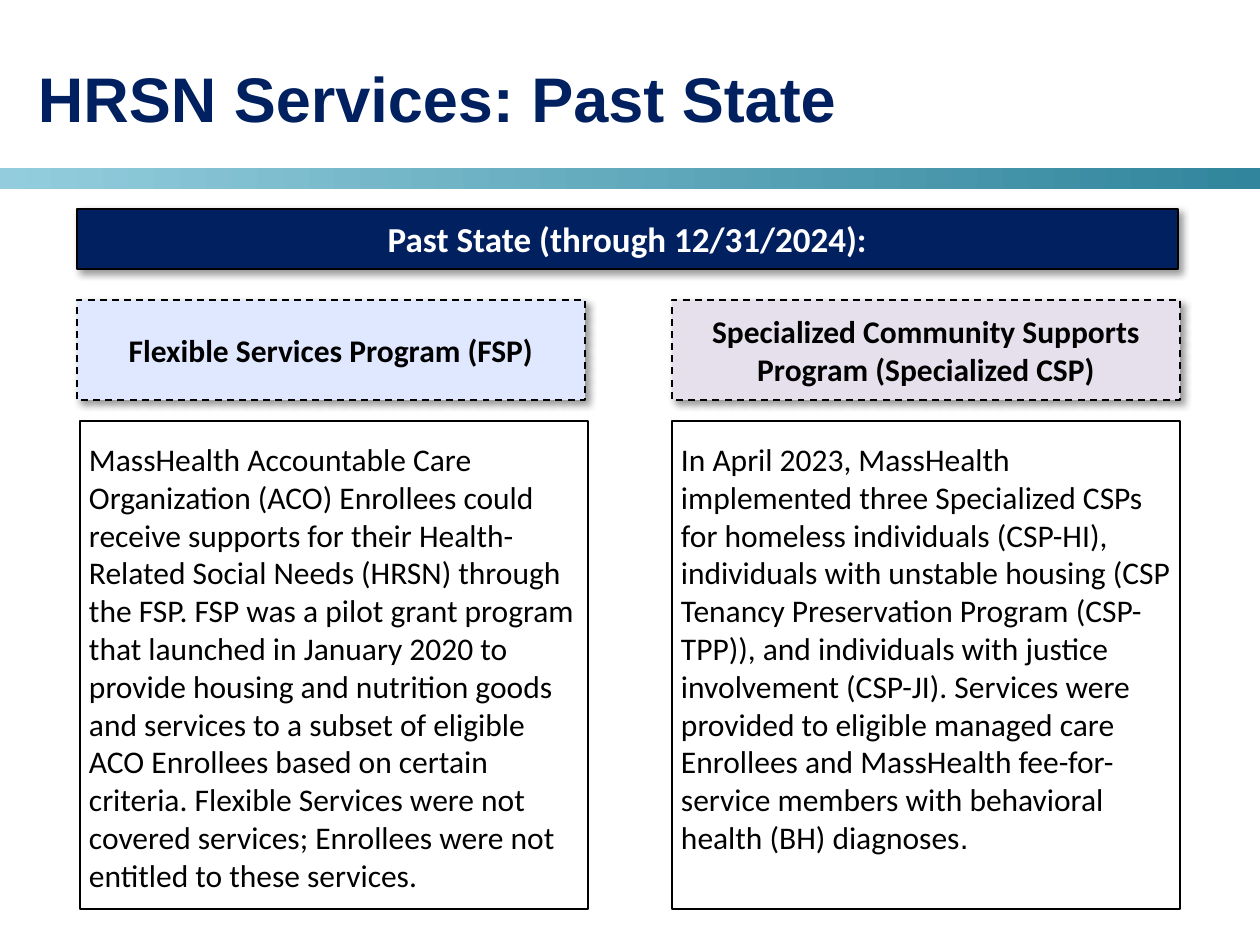
"""Build the slide on the past state of HRSN services."""
from dataclasses import dataclass

from lxml import etree
from pptx import Presentation, util as u
from pptx.dml.color import RGBColor
from pptx.enum import dml, shapes, text
from pptx.oxml.ns import qn


@dataclass(frozen=True)
class Theme:
    navy: str = "002060"
    blue: str = "DFE8FF"
    lilac: str = "E6E0EC"
    teal: str = "31859C"
    aqua: str = "93CDDD"
    black: str = "000000"
    white: str = "FFFFFF"
    title_size: int = 36
    banner_size: int = 20
    body_size: int = 18
    title_font: str = "Arial"
    body_font: str = "Calibri"


class Builder:
    SCALE = 914400 / 126

    def __init__(self, deck, theme):
        self.theme = theme
        deck.slide_width, deck.slide_height = self.px(1260), self.px(945)
        self.page = deck.slides.add_slide(deck.slide_layouts[6])

    def px(self, length):
        return u.Emu(round(length * self.SCALE))

    def rectangle(self, *bounds):
        box = self.page.shapes.add_shape(
            shapes.MSO_SHAPE.RECTANGLE, *map(self.px, bounds))
        box.shadow.inherit = False
        return box

    def outline(self, box, points, dashed=False):
        box.line.color.rgb = RGBColor.from_string(self.theme.black)
        box.line.width = u.Pt(points)
        if dashed:
            box.line.dash_style = dml.MSO_LINE.DASH

    def cast_shadow(self, box):
        effects = box._element.spPr.find(qn("a:effectLst"))
        shadow = etree.SubElement(
            effects, qn("a:outerShdw"), blurRad=str(u.Pt(4)),
            dist=str(u.Pt(3)), dir=str(45 * 60000), algn="tl", rotWithShape="0")
        color = etree.SubElement(shadow, qn("a:srgbClr"), val=self.theme.black)
        etree.SubElement(color, qn("a:alpha"), val="40000")

    def set_text(self, box, words, size, color, insets, bold=False, centered=False,
                 anchor=text.MSO_ANCHOR.MIDDLE, font=None):
        frame = box.text_frame
        frame.word_wrap = True
        frame.vertical_anchor = anchor
        (frame.margin_left, frame.margin_top,
         frame.margin_right, frame.margin_bottom) = map(self.px, insets)
        para = frame.paragraphs[0]
        para.text = words
        para.alignment = text.PP_ALIGN.CENTER if centered else text.PP_ALIGN.LEFT
        para.font.name = font or self.theme.body_font
        para.font.size = u.Pt(size)
        para.font.bold = bold
        para.font.color.rgb = RGBColor.from_string(color)
        return para

    def gradient_band(self, *bounds):
        band = self.rectangle(*bounds)
        band.line.fill.background()
        band.fill.gradient()
        band.fill.gradient_angle = 180
        colors = (self.theme.teal, self.theme.aqua)
        for stop, color in zip(band.fill.gradient_stops, colors):
            stop.color.rgb = RGBColor.from_string(color)

    def title(self, words, *bounds):
        box = self.page.shapes.add_textbox(*map(self.px, bounds))
        self.set_text(box, words, self.theme.title_size, self.theme.navy,
                      (0, 0, 0, 0), bold=True, font=self.theme.title_font)

    def heading(self, words, bounds, fill, size, color, dashed=False):
        box = self.rectangle(*bounds)
        box.fill.solid()
        box.fill.fore_color.rgb = RGBColor.from_string(fill)
        self.outline(box, 1, dashed)
        self.cast_shadow(box)
        self.set_text(box, words, size, color, (3, 3, 3, 3), bold=True, centered=True)

    def description(self, words, bounds, ending=""):
        box = self.rectangle(*bounds)
        box.fill.background()
        self.outline(box, 0.75)
        para = self.set_text(box, words, self.theme.body_size, self.theme.black,
                             (9, 19, 9, 5), anchor=text.MSO_ANCHOR.TOP)
        para.space_after = u.Pt(3)
        if ending:
            span = para.add_run()
            span.text = ending
            span.font.name = self.theme.title_font


def main():
    deck = Presentation()
    theme = Theme()
    builder = Builder(deck, theme)
    builder.gradient_band(0, 168, 1260, 21)
    builder.title("HRSN Services: Past State", 38, 59, 1140, 77)
    builder.heading("Past State (through 12/31/2024):", (77, 209, 1101, 60),
                    theme.navy, theme.banner_size, theme.white)
    programs = [
        (77, 80, theme.blue, "Flexible Services Program (FSP)",
         "MassHealth Accountable Care Organization (ACO) Enrollees could receive "
         "supports for their Health-Related Social Needs (HRSN) through the FSP. "
         "FSP was a pilot grant program that launched in January 2020 to provide "
         "housing and nutrition goods and services to a subset of eligible ACO "
         "Enrollees based on certain criteria. Flexible Services were not covered "
         "services; Enrollees were not entitled to these services.", ""),
        (672, 672, theme.lilac,
         "Specialized Community Supports Program (Specialized CSP)",
         "In April 2023, MassHealth implemented three Specialized CSPs for "
         "homeless individuals (CSP-HI), individuals with unstable housing (CSP "
         "Tenancy Preservation Program (CSP-TPP)), and individuals with justice "
         "involvement (CSP-JI). Services were provided to eligible managed care "
         "Enrollees and MassHealth fee-for-service members with behavioral "
         "health (BH) diagnoses", "."),
    ]
    for heading_left, body_left, fill, name, words, ending in programs:
        builder.heading(name, (heading_left, 300, 508, 100), fill,
                        theme.body_size, theme.black, dashed=True)
        builder.description(words, (body_left, 421, 508, 488), ending)
    deck.save("out.pptx")


if __name__ == "__main__":
    main()
